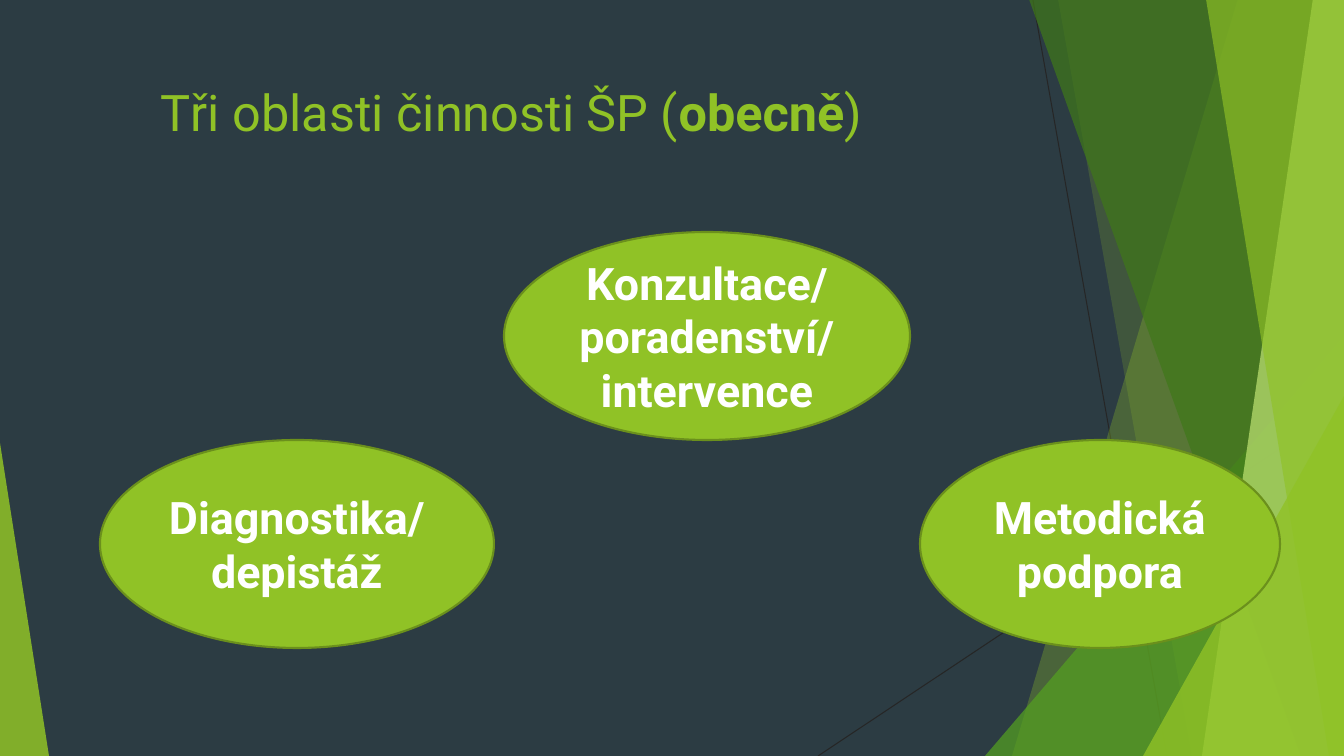
from dataclasses import dataclass

from lxml import etree
from pptx import Presentation
from pptx.dml.color import RGBColor
from pptx.enum.lang import MSO_LANGUAGE_ID
from pptx.enum.shapes import MSO_CONNECTOR, MSO_SHAPE
from pptx.enum.text import MSO_ANCHOR, PP_ALIGN
from pptx.oxml.ns import qn
from pptx.util import Pt

STRAIGHT = MSO_CONNECTOR.STRAIGHT
ELLIPSE = MSO_SHAPE.OVAL
TRIANGLE = MSO_SHAPE.ISOSCELES_TRIANGLE
CZECH = MSO_LANGUAGE_ID.CZECH
MIDDLE = MSO_ANCHOR.MIDDLE
TOP = MSO_ANCHOR.TOP
CENTER = PP_ALIGN.CENTER
LEFT = PP_ALIGN.LEFT
EMU_PER_PX = 914400 / 100.8


@dataclass(frozen=True)
class Theme:
    font: str = "Roboto"
    background: str = "2C3C43"
    lime: str = "90C226"
    pale: str = "C0E474"
    green: str = "54A021"
    forest: str = "3F7819"
    outline: str = "6B901C"
    hairline: str = "262626"
    white: str = "FFFFFF"
    title_size: int = 36
    label_size: int = 32
    hairline_width: float = 0.75
    outline_width: float = 1.5


@dataclass(frozen=True)
class Box:
    left: int
    top: int
    width: int
    height: int

    @property
    def right(self):
        return self.left + self.width

    @property
    def bottom(self):
        return self.top + self.height

    def inner(self, left, top, width, height):
        return Box(self.left + left, self.top + top, width, height)

    def emu(self):
        return [px(side) for side in (self.left, self.top, self.width, self.height)]


THEME = Theme()


def px(length):
    return round(length * EMU_PER_PX)


def rgb(value):
    return RGBColor.from_string(value)


def paint(shape, color, opacity=100):
    shape.shadow.inherit = False
    shape.fill.solid()
    shape.fill.fore_color.rgb = rgb(color)
    shape.line.fill.background()
    if opacity < 100:
        color_node = shape.fill._xPr.find(qn("a:solidFill"))[0]
        etree.SubElement(color_node, qn("a:alpha"), val=str(opacity * 1000))


def add_spans(frame, spans, size, color, align, anchor):
    frame.word_wrap = True
    frame.vertical_anchor = anchor
    para = frame.paragraphs[0]
    para.alignment = align
    for text, bold in spans:
        span = para.add_run()
        span.text = text
        span.font.name = THEME.font
        span.font.size = Pt(size)
        span.font.bold = bold
        span.font.color.rgb = rgb(color)
        span.font.language_id = CZECH


def add_hairline(page, start, end):
    line = page.shapes.add_connector(STRAIGHT, *map(px, start + end))
    line.line.color.rgb = rgb(THEME.hairline)
    line.line.width = Pt(THEME.hairline_width)
    etree.SubElement(line._element.spPr, qn("a:effectLst"))


def add_blade(page, box, top_x, bottom_x, color, opacity):
    left = box.left
    builder = page.shapes.build_freeform(left + top_x, box.top - 1, scale=EMU_PER_PX)
    corners = [(box.right, box.top - 1), (box.right, box.bottom), (left + bottom_x, box.bottom)]
    builder.add_line_segments(corners, close=True)
    paint(builder.convert_to_shape(), color, opacity)


def add_wedge(page, box, apex, color, opacity):
    wedge = page.shapes.add_shape(TRIANGLE, *box.emu())
    wedge.adjustments[0] = apex
    paint(wedge, color, opacity)


def add_right_wedge(page, box, width, height, color, opacity):
    corner = Box(box.right - width, box.bottom - height, width, height)
    add_wedge(page, corner, 1, color, opacity)


def add_facets(page, box):
    add_hairline(page, (box.left + 215, box.top), (box.left + 349, box.bottom))
    add_hairline(page, (box.right, box.top + 406), (box.left, box.bottom))
    add_blade(page, box, 420, 194, THEME.lime, 30)
    add_blade(page, box, 240, 374, THEME.lime, 20)
    add_right_wedge(page, box, 359, 420, THEME.green, 72)
    add_blade(page, box, 211, 483, THEME.forest, 70)
    add_blade(page, box, 495, 384, THEME.pale, 70)
    add_blade(page, box, 388, 511, THEME.lime, 65)
    add_right_wedge(page, box, 201, 360, THEME.lime, 80)


def add_title(page, box):
    title = page.shapes.add_textbox(*box.emu())
    spans = [("Tři oblasti činnosti ŠP (", False), ("obecně", True), (")", False)]
    add_spans(title.text_frame, spans, THEME.title_size, THEME.lime, LEFT, TOP)


def add_area(page, box, label):
    area = page.shapes.add_shape(ELLIPSE, *box.emu())
    paint(area, THEME.lime)
    area.line.color.rgb = rgb(THEME.outline)
    area.line.width = Pt(THEME.outline_width)
    add_spans(area.text_frame, [(label, True)], THEME.label_size, THEME.white, CENTER, MIDDLE)


def add_areas(page, box):
    row = box.height // 2
    areas = [
        (0, row, 394, "Diagnostika/depistáž"),
        (404, 0, 406, "Konzultace/poradenství/intervence"),
        (820, row, 360, "Metodická podpora"),
    ]
    for left, top, width, label in areas:
        add_area(page, box.inner(left, top, width, row), label)


def build_areas_slide(deck, box):
    page = deck.slides.add_slide(deck.slide_layouts[6])
    page.background.fill.solid()
    page.background.fill.fore_color.rgb = rgb(THEME.background)
    add_facets(page, box.inner(818, 0, 526, box.height))
    add_wedge(page, box.inner(0, 443, 49, 313), 0, THEME.lime, 85)
    add_title(page, box.inner(151, 76, 1058, 85))
    add_areas(page, box.inner(100, 232, 1180, 416))


def main():
    deck = Presentation()
    box = Box(0, 0, 1344, 756)
    deck.slide_width = px(box.width)
    deck.slide_height = px(box.height)
    build_areas_slide(deck, box)
    deck.save("out.pptx")


if __name__ == "__main__":
    main()
